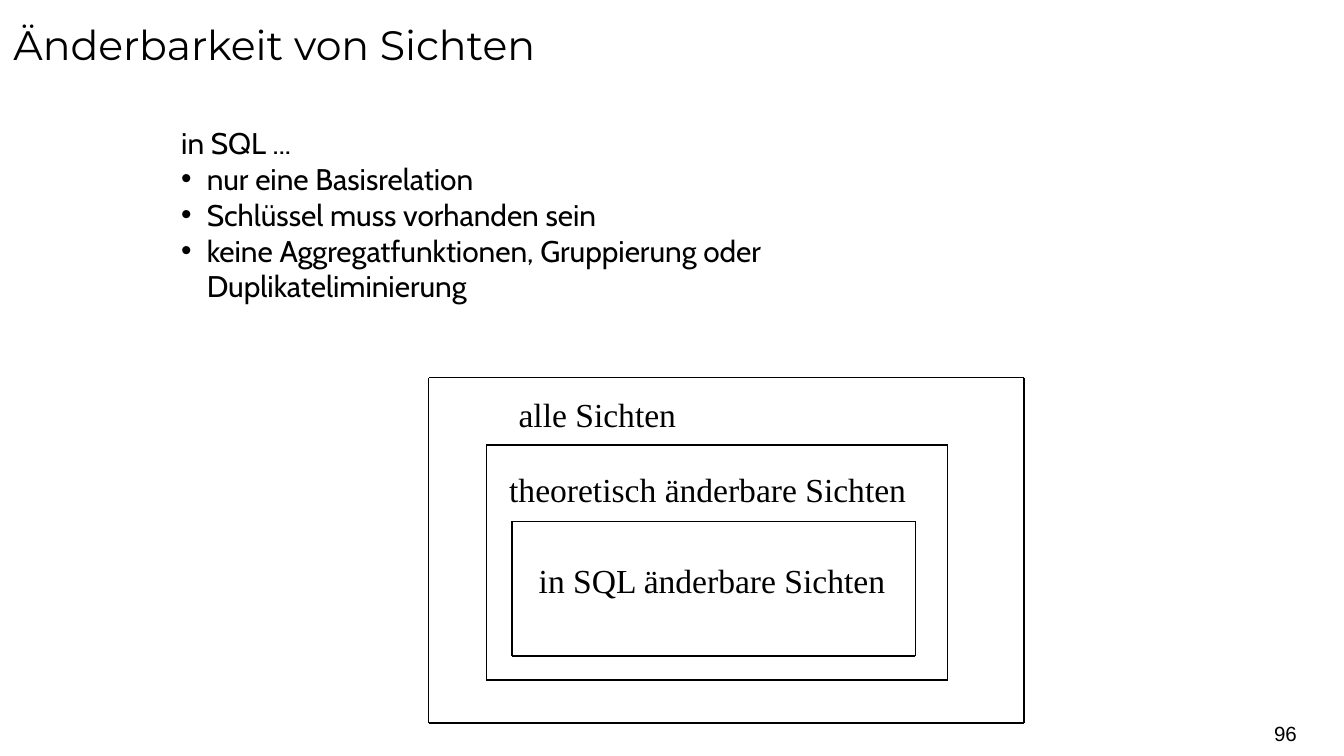
from dataclasses import dataclass

from lxml.etree import SubElement
from pptx import Presentation
from pptx.dml.color import RGBColor
from pptx.enum.shapes import MSO_CONNECTOR
from pptx.enum.text import MSO_ANCHOR, MSO_AUTO_SIZE, PP_ALIGN
from pptx.oxml.ns import qn
from pptx.slide import Slide
from pptx.text.text import TextFrame, _Paragraph
from pptx.util import Inches, Pt


@dataclass(frozen=True)
class TextStyle:
    font: str
    size: float


@dataclass(frozen=True)
class Theme:
    ink: RGBColor = RGBColor(0, 0, 0)
    line_width: float = 0.75
    title: TextStyle = TextStyle("Montserrat", 22)
    body: TextStyle = TextStyle("Cabin", 16)
    label: TextStyle = TextStyle("Times New Roman", 18)
    number: TextStyle = TextStyle("Arial", 11)


@dataclass(frozen=True)
class Area:
    left: float
    top: float
    width: float
    height: float


@dataclass(frozen=True)
class ViewSet:
    """A nested set of views: its frame and its label."""
    text: str
    left: float
    top: float
    right: float
    bottom: float
    label: Area


THEME = Theme()
RULES = (
    "nur eine Basisrelation",
    "Schlüssel muss vorhanden sein",
    "keine Aggregatfunktionen, Gruppierung oder Duplikateliminierung",
)
VIEW_SETS = (
    ViewSet("alle Sichten", 3.19, 2.81, 7.62, 5.38, Area(3.76, 2.88, 3.08, 0.4)),
    ViewSet("theoretisch änderbare Sichten", 3.62, 3.31, 7.05, 5.06,
            Area(3.69, 3.44, 3.65, 0.4)),
    ViewSet("in SQL änderbare Sichten", 3.81, 3.88, 6.81, 4.88,
            Area(3.91, 4.12, 3.65, 0.4)),
)


def add_span(para: _Paragraph, text: str, style: TextStyle) -> None:
    span = para.add_run()
    span.text = text
    span.font.name = style.font
    span.font.size = Pt(style.size)
    span.font.color.rgb = THEME.ink


def add_text_box(page: Slide, area: Area) -> TextFrame:
    box = page.shapes.add_textbox(Inches(area.left), Inches(area.top),
                                  Inches(area.width), Inches(area.height))
    box.text_frame.word_wrap = True
    return box.text_frame


def set_bullet(para: _Paragraph, indent: float) -> None:
    properties = para._p.get_or_add_pPr()
    properties.set("marL", str(Inches(indent)))
    properties.set("indent", str(-Inches(indent)))
    SubElement(properties, qn("a:buFont")).set("typeface", "Arial")
    SubElement(properties, qn("a:buChar")).set("char", "•")


def add_title(page: Slide, text: str) -> None:
    title = page.shapes.title
    title.left, title.top = Inches(0), Inches(0)
    title.width, title.height = Inches(10), Inches(0.94)
    frame = title.text_frame
    frame.auto_size = MSO_AUTO_SIZE.NONE
    frame.vertical_anchor = MSO_ANCHOR.TOP
    para = frame.paragraphs[0]
    para.alignment = PP_ALIGN.LEFT
    para.line_spacing = 1.25
    add_span(para, text, THEME.title)


def add_rules(page: Slide, intro: str, rules: tuple[str, ...]) -> None:
    frame = add_text_box(page, Area(1.25, 0.88, 6.38, 1.94))
    add_span(frame.paragraphs[0], intro, THEME.body)
    for rule in rules:
        para = frame.add_paragraph()
        set_bullet(para, 0.19)
        add_span(para, rule, THEME.body)


def add_view_set(page: Slide, views: ViewSet) -> None:
    corners = ((views.left, views.top), (views.right, views.top),
               (views.right, views.bottom), (views.left, views.bottom))
    for start, end in zip(corners, corners[1:] + corners[:1]):
        side = page.shapes.add_connector(
            MSO_CONNECTOR.STRAIGHT, *map(Inches, start + end))
        side.line.color.rgb = THEME.ink
        side.line.width = Pt(THEME.line_width)
        SubElement(side._element.spPr, qn("a:effectLst"))
    frame = add_text_box(page, views.label)
    frame.auto_size = MSO_AUTO_SIZE.SHAPE_TO_FIT_TEXT
    add_span(frame.paragraphs[0], views.text, THEME.label)


def add_page_number(page: Slide, number: str) -> None:
    frame = add_text_box(page, Area(7.41, 5.31, 2.24, 0.3))
    frame.margin_left = frame.margin_right = 0
    frame.vertical_anchor = MSO_ANCHOR.MIDDLE
    frame.paragraphs[0].alignment = PP_ALIGN.RIGHT
    add_span(frame.paragraphs[0], number, THEME.number)


def main() -> None:
    # Widescreen page, 16:9
    deck = Presentation()
    deck.slide_width = Inches(10)
    deck.slide_height = Inches(10 * 9 / 16)
    page = deck.slides.add_slide(deck.slide_layouts.get_by_name("Title Only"))

    # Heading and conditions
    add_title(page, "Änderbarkeit von Sichten")
    add_rules(page, "in SQL ...", RULES)

    # Nested sets of views, from outside to inside
    for views in VIEW_SETS:
        add_view_set(page, views)

    # Footer
    add_page_number(page, "96")
    deck.save("out.pptx")


if __name__ == "__main__":
    main()
